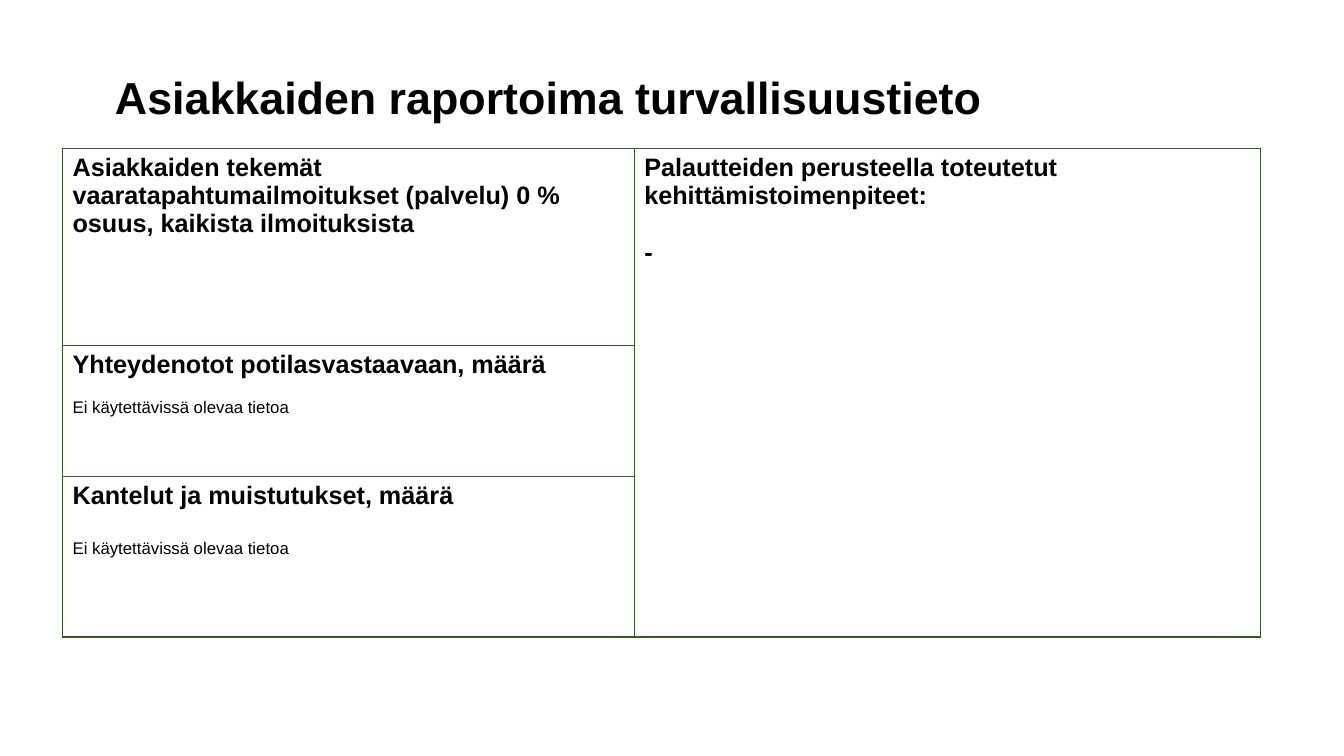
"""Build a slide with a table of safety information reported by clients."""
from dataclasses import dataclass

import pptx
import pptx.dml.color
import pptx.enum.text
import pptx.oxml
import pptx.oxml.ns
import pptx.table
import pptx.text.text
import pptx.util

Inches = pptx.util.Inches
Pt = pptx.util.Pt
RGBColor = pptx.dml.color.RGBColor

BLACK = RGBColor(0x00, 0x00, 0x00)
WHITE = RGBColor(0xFF, 0xFF, 0xFF)
GREEN = RGBColor(0x38, 0x57, 0x23)

COLUMN_WIDTHS = (5.67, 6.21)
ROW_HEIGHTS = (1.96, 1.3, 1.59)
NO_DATA = "Ei käytettävissä olevaa tietoa"


@dataclass(frozen=True)
class Topic:
    row: int
    column: int
    heading: str
    body: str = ""
    body_size: float = 12
    body_bold: bool = False
    gap: float = 0


TOPICS = (
    Topic(0, 0, "Asiakkaiden tekemät vaaratapahtumailmoitukset (palvelu) 0 % "
                "osuus, kaikista ilmoituksista"),
    Topic(0, 1, "Palautteiden perusteella toteutetut kehittämistoimenpiteet:",
          "-", body_size=18, body_bold=True, gap=20.7),
    Topic(1, 0, "Yhteydenotot potilasvastaavaan, määrä", NO_DATA, gap=13.8),
    Topic(2, 0, "Kantelut ja muistutukset, määrä", NO_DATA, gap=20.7),
)


def write(p: pptx.text.text._Paragraph, text: str, *, size: float = 18,
          bold: bool = True, before: float = 0, spacing: float = 1.0) -> None:
    """Write formatted text into a paragraph."""
    if before:
        p.space_before = Pt(before)
    p.line_spacing = spacing
    p.alignment = pptx.enum.text.PP_ALIGN.LEFT
    r = p.add_run()
    r.text = text
    r.font.name = "Arial"
    r.font.size = Pt(size)
    r.font.bold = bold
    r.font.color.rgb = BLACK


def style_cell(cell: pptx.table._Cell) -> None:
    """Give a cell a white fill and green borders."""
    cell.fill.solid()
    cell.fill.fore_color.rgb = WHITE
    tc_pr = cell._tc.get_or_add_tcPr()
    for i, side in enumerate("LRTB"):
        tc_pr.insert(i, pptx.oxml.parse_xml(
            f'<a:ln{side} {pptx.oxml.ns.nsdecls("a")} w="{Pt(1)}">'
            f'<a:solidFill><a:srgbClr val="{GREEN}"/></a:solidFill></a:ln{side}>'))


def fill_topic(table: pptx.table.Table, topic: Topic) -> None:
    """Write a topic's heading and body into its cell."""
    tf = table.cell(topic.row, topic.column).text_frame
    write(tf.paragraphs[0], topic.heading)
    if topic.body:
        write(tf.add_paragraph(), topic.body, size=topic.body_size,
              bold=topic.body_bold, before=topic.gap)


def main() -> None:
    """Create and save the presentation."""
    prs = pptx.Presentation()
    prs.slide_width, prs.slide_height = Inches(13.33), Inches(7.5)
    s = prs.slides.add_slide(prs.slide_layouts[5])

    title = s.shapes.title
    title.left, title.top = Inches(1.04), Inches(0.27)
    title.width, title.height = Inches(10.11), Inches(1.45)
    tf = title.text_frame
    tf.word_wrap = True
    tf.vertical_anchor = pptx.enum.text.MSO_ANCHOR.MIDDLE
    write(tf.paragraphs[0], "Asiakkaiden raportoima turvallisuustieto",
          size=32, spacing=0.9)

    table = s.shapes.add_table(
        len(ROW_HEIGHTS), len(COLUMN_WIDTHS), Inches(0.62), Inches(1.47),
        Inches(sum(COLUMN_WIDTHS)), Inches(sum(ROW_HEIGHTS))).table
    table.first_row = table.horz_banding = False
    for column, width in zip(table.columns, COLUMN_WIDTHS):
        column.width = Inches(width)
    for row, height in zip(table.rows, ROW_HEIGHTS):
        row.height = Inches(height)
    for cell in table.iter_cells():
        style_cell(cell)
    table.cell(0, 1).merge(table.cell(2, 1))
    for topic in TOPICS:
        fill_topic(table, topic)

    prs.save("out.pptx")


if __name__ == "__main__":
    main()
